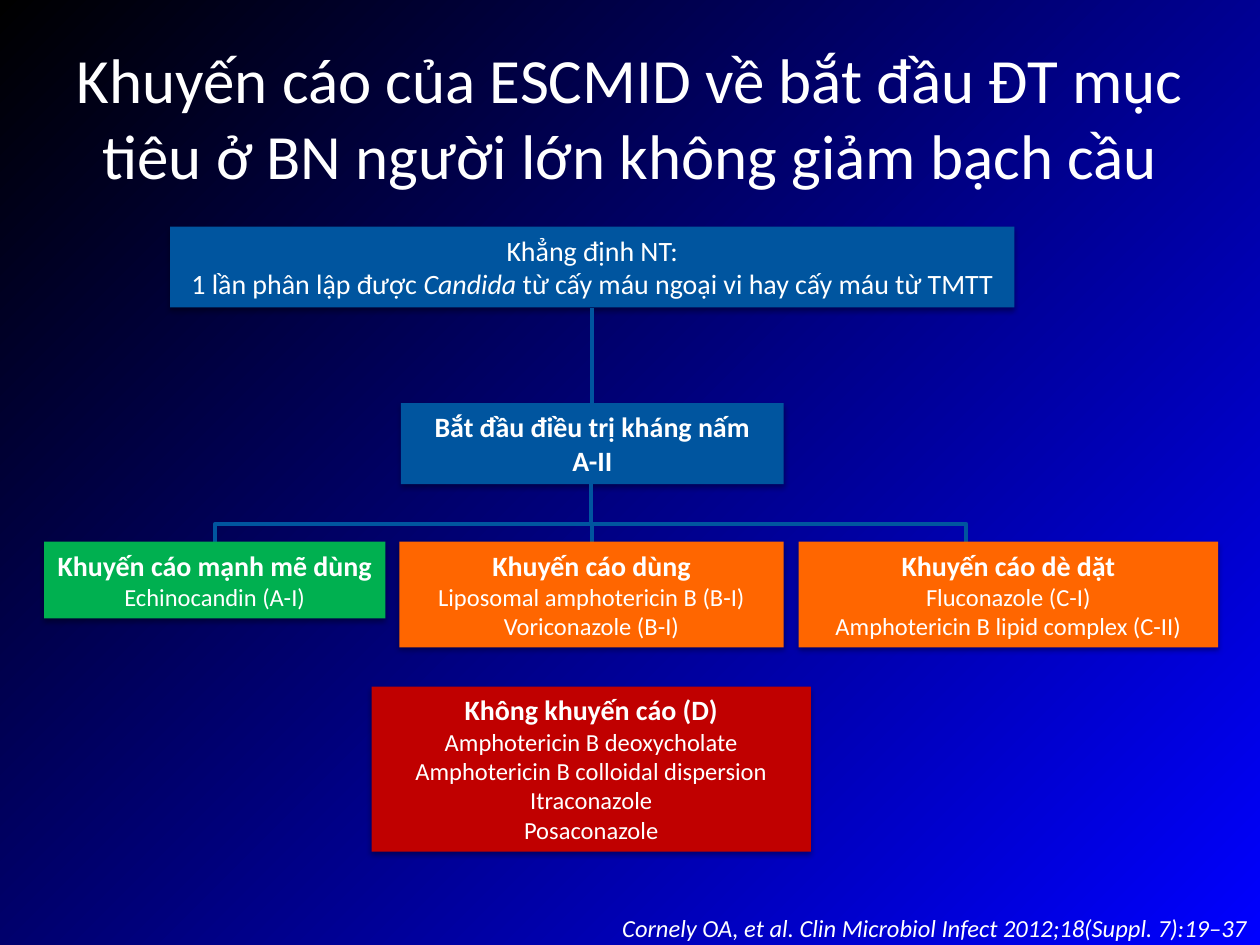
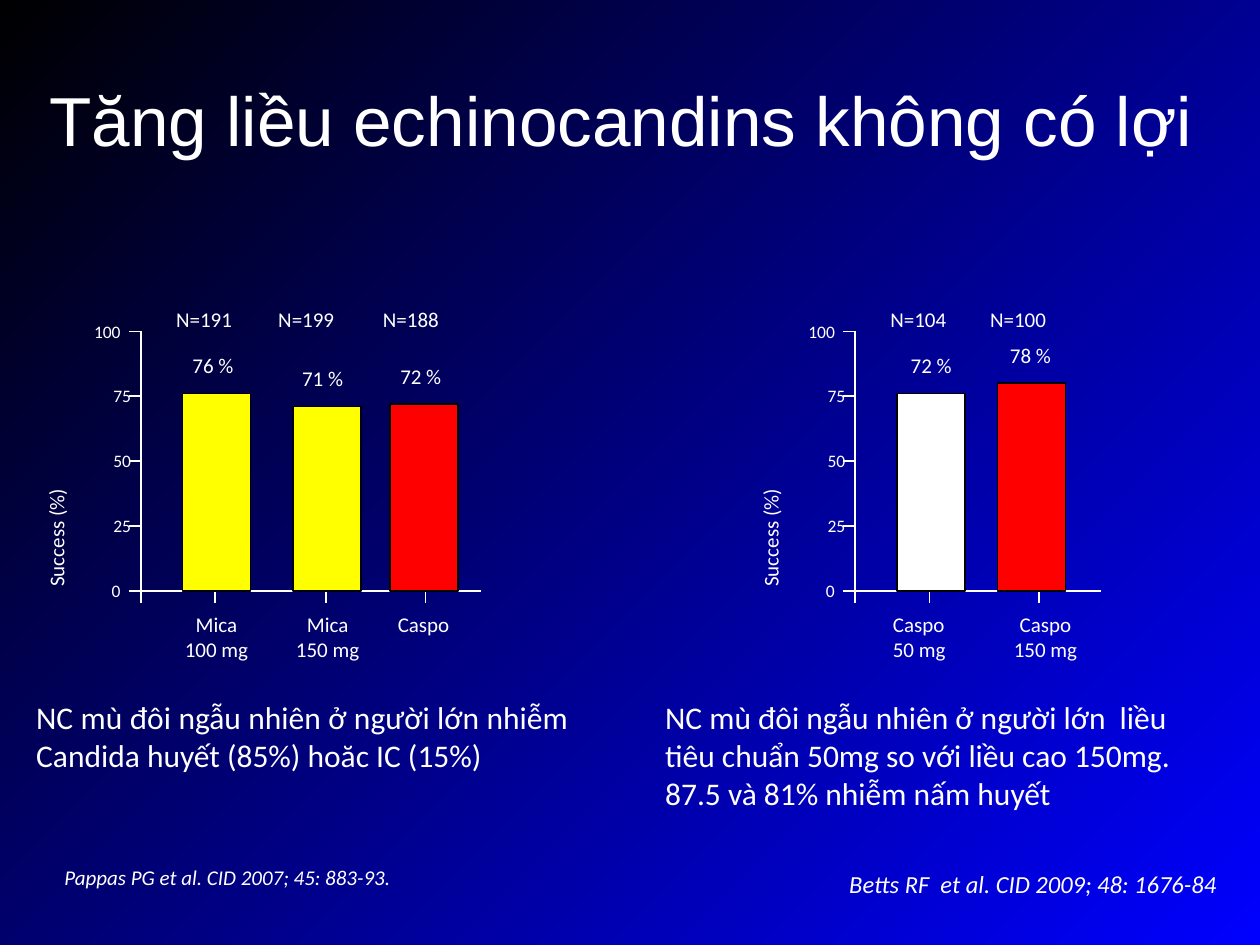
from dataclasses import dataclass

from pptx import Presentation
from pptx.dml.color import RGBColor
from pptx.enum import shapes as kinds, text as styles
from pptx.oxml import parse_xml
from pptx.oxml.ns import nsdecls, qn
from pptx.util import Cm, Pt

COLORS = {
    "white": "FFFFFF",
    "black": "000000",
    "glow": "0000FF",
    "step": "00559F",
    "strong": "00B050",
    "moderate": "FF6600",
    "against": "C00000",
    "yellow": "FFFF00",
    "red": "FF0000",
}
FONT = "Calibri"
LEFT, CENTER, RIGHT, JUSTIFY = (
    styles.PP_ALIGN.LEFT, styles.PP_ALIGN.CENTER,
    styles.PP_ALIGN.RIGHT, styles.PP_ALIGN.JUSTIFY)
TOP, MIDDLE, BOTTOM = (
    styles.MSO_ANCHOR.TOP, styles.MSO_ANCHOR.MIDDLE, styles.MSO_ANCHOR.BOTTOM)

BODY_INSETS = (0.25, 0.13, 0.25, 0.13)
CITATION_INSETS = (0.51, 0.13, 0.25, 0.51)
LABEL_INSETS = (0.1, 0.1, 0.1, 0.1)
NO_INSETS = (0, 0, 0, 0)

# Bar chart geometry in cm; x values are measured from the vertical axis
AXIS_TOP, AXIS_BOTTOM = 6.68, 11.91
TICK = 0.24
BAR_WIDTH = 1.37


@dataclass
class Bar:
    left: float
    tick: float
    height: float  # on the 0-100 scale
    color: str
    count: str
    count_x: float
    value: str
    value_x: float
    name: str
    name_x: float
    name_align: styles.PP_ALIGN = CENTER


MICA_TRIAL = [
    Bar(0.84, 1.5, 76, "yellow", "N=191", 0.61, "76 %", 0.94, "Mica\n100 mg", 0.66),
    Bar(3.07, 3.73, 71, "yellow", "N=199", 2.67, "71 %", 3.15, "Mica\n150 mg", 2.9),
    Bar(5.03, 5.74, 72, "red", "N=188", 4.78, "72 %", 5.13, "Caspo", 5.08, LEFT),
]
CASPO_TRIAL = [
    Bar(0.84, 1.5, 76, "white", "N=104", 0.61, "72 %", 1.02, "Caspo\n50 mg", 0.66, LEFT),
    Bar(2.87, 3.71, 80, "red", "N=100", 2.62, "78 %", 3.02, "Caspo\n150 mg", 2.97),
]


def rgb(name):
    return RGBColor.from_string(COLORS[name])


def cm(*lengths):
    return [Cm(length) for length in lengths]


def set_background(master):
    """Radial gradient, shared by all slides, that glows from the lower right."""
    background = parse_xml(
        f'<p:bg {nsdecls("p", "a")}><p:bgPr><a:gradFill rotWithShape="1"><a:gsLst>'
        f'<a:gs pos="0"><a:srgbClr val="{COLORS["glow"]}"/></a:gs>'
        f'<a:gs pos="100000"><a:srgbClr val="{COLORS["black"]}"/></a:gs></a:gsLst>'
        '<a:path path="circle"><a:fillToRect l="100000" t="100000"/></a:path>'
        '</a:gradFill><a:effectLst/></p:bgPr></p:bg>')
    content = master.element.cSld
    previous = content.find(qn("p:bg"))
    if previous is not None:
        content.remove(previous)
    content.insert(0, background)


def style(paragraph, size, align=LEFT, bold=False, italic=False, font=FONT):
    paragraph.alignment = align
    paragraph.font.name = font
    paragraph.font.size = Pt(size)
    paragraph.font.bold = bold
    paragraph.font.italic = italic
    paragraph.font.color.rgb = rgb("white")


def set_frame(frame, insets, anchor):
    frame.word_wrap = True
    frame.auto_size = styles.MSO_AUTO_SIZE.NONE
    frame.vertical_anchor = anchor
    (frame.margin_left, frame.margin_top,
     frame.margin_right, frame.margin_bottom) = cm(*insets)


def add_titled_slide(prs, title, place, size, font=FONT):
    slide = prs.slides.add_slide(prs.slide_layouts[5])
    heading = slide.shapes.title
    heading.left, heading.top, heading.width, heading.height = cm(*place)
    set_frame(heading.text_frame, BODY_INSETS, MIDDLE)
    heading.text_frame.text = title
    style(heading.text_frame.paragraphs[0], size, CENTER, font=font)
    return slide


def add_text(shapes, content, place, size, align=LEFT, insets=BODY_INSETS,
             anchor=TOP, italic=False):
    label = shapes.add_textbox(*cm(*place))
    set_frame(label.text_frame, insets, anchor)
    paragraph = label.text_frame.paragraphs[0]
    paragraph.text = content.replace("\n", "\v")
    style(paragraph, size, align, italic=italic)
    return label


def add_rect(shapes, place, color):
    rect = shapes.add_shape(kinds.MSO_SHAPE.RECTANGLE, *cm(*place))
    rect.fill.solid()
    rect.fill.fore_color.rgb = rgb(color)
    rect.line.fill.background()
    rect.shadow.inherit = False
    return rect


def add_step(shapes, place, color, heading, drugs=(), bold=True):
    """Flow chart box with a soft shadow, a heading and smaller lines below."""
    step = add_rect(shapes, place, color)
    step.element.spPr.find(qn("a:effectLst")).append(parse_xml(
        f'<a:outerShdw {nsdecls("a")} blurRad="40000" dist="23000" dir="5400000"'
        f' rotWithShape="0"><a:srgbClr val="{COLORS["black"]}">'
        '<a:alpha val="35000"/></a:srgbClr></a:outerShdw>'))
    frame = step.text_frame
    set_frame(frame, BODY_INSETS, TOP)
    frame.paragraphs[0].text = heading.replace("\n", "\v")
    style(frame.paragraphs[0], 16, CENTER, bold=bold)
    for drug in drugs:
        paragraph = frame.add_paragraph()
        paragraph.text = drug
        style(paragraph, 14, CENTER)
    return step


def add_line(shapes, x1, y1, x2, y2, color="white", width=1,
             kind=kinds.MSO_CONNECTOR.STRAIGHT):
    line = shapes.add_connector(kind, *cm(x1, y1, x2, y2))
    line.line.color.rgb = rgb(color)
    line.line.width = Pt(width)
    line.element.spPr.append(parse_xml(f'<a:effectLst {nsdecls("a")}/>'))
    return line


def add_branch(shapes, x1, y1, x2, y2):
    """Elbow that leaves downwards: a horizontal elbow turned a quarter."""
    drop, reach = y2 - y1, abs(x2 - x1)
    left, top = (x1 + x2 - drop) / 2, (y1 + y2 - reach) / 2
    branch = add_line(shapes, left, top, left + drop, top + reach, "step", 2.25,
                      kinds.MSO_CONNECTOR.ELBOW)
    xfrm = branch.element.spPr.find(qn("a:xfrm"))
    xfrm.set("rot", "5400000" if x2 < x1 else "16200000")
    if x2 >= x1:
        xfrm.set("flipH", "1")


def add_bar_panel(slide, axis_x, axis_end, bars):
    shapes = slide.shapes.add_group_shape().shapes
    add_line(shapes, axis_x, AXIS_TOP, axis_x, AXIS_BOTTOM)
    add_line(shapes, axis_x, AXIS_BOTTOM, axis_end, AXIS_BOTTOM)
    scale = (AXIS_BOTTOM - AXIS_TOP) / 100

    for level in range(0, 101, 25):
        y = AXIS_BOTTOM - level * scale
        add_line(shapes, axis_x - TICK, y, axis_x, y)
        gap = 0.41 if level in (0, 100) else 0.2
        add_text(shapes, str(level), (axis_x - gap - 0.61, y - 0.22, 0.61, 0.43),
                 10, RIGHT, NO_INSETS, MIDDLE)

    for tick in [0] + [bar.tick for bar in bars]:
        add_line(shapes, axis_x + tick, AXIS_BOTTOM, axis_x + tick, AXIS_BOTTOM + TICK)

    for bar in bars:
        height = bar.height * scale
        top = AXIS_BOTTOM - height
        column = add_rect(shapes, (axis_x + bar.left, top, BAR_WIDTH, height), bar.color)
        column.line.color.rgb = rgb("black")
        column.line.width = Pt(1)
        add_text(shapes, bar.value, (axis_x + bar.value_x, top - 0.92, 1.5, 0.71),
                 12, insets=LABEL_INSETS, anchor=MIDDLE)
        add_text(shapes, bar.count, (axis_x + bar.count_x, 6.08, 1.63, 0.71),
                 12, insets=LABEL_INSETS, anchor=MIDDLE)
        add_text(shapes, bar.name, (axis_x + bar.name_x, 12.22, 1.73, 1.22),
                 12, bar.name_align, LABEL_INSETS)

    axis_title = add_text(shapes, "Success (%)", (axis_x - 4.39, 8.89, 5.36, 0.51),
                          12, insets=NO_INSETS, anchor=MIDDLE)
    axis_title.rotation = 270


def build_recommendations(prs):
    slide = add_titled_slide(
        prs, "Khuyến cáo của ESCMID về bắt đầu ĐT mục tiêu ở BN người lớn "
        "không giảm bạch cầu", (1.27, 0.76, 22.86, 3.18), 36)
    shapes = slide.shapes

    diagnosis = add_step(shapes, (3.43, 4.57, 17.02, 1.63), "step",
                         "Khẳng định NT:", bold=False)
    finding = diagnosis.text_frame.add_paragraph()
    style(finding, 16, CENTER)
    for part in ("1 lần phân lập được ", "Candida ",
                 "từ cấy máu ngoại vi hay cấy máu từ TMTT"):
        run = finding.add_run()
        run.text = part
        run.font.italic = part == "Candida "

    add_step(shapes, (8.08, 8.13, 7.72, 1.63), "step",
             "Bắt đầu điều trị kháng nấm\nA-II")
    add_step(shapes, (7.49, 13.84, 8.86, 3.33), "against", "Không khuyến cáo (D)",
             ("Amphotericin B deoxycholate", "Amphotericin B colloidal dispersion",
              "Itraconazole", "Posaconazole"))

    for target_x in (4.34, 11.94, 19.48):
        add_branch(shapes, 11.92, 9.74, target_x, 11.38)
    add_step(shapes, (0.89, 10.92, 6.88, 1.55), "strong",
             "Khuyến cáo mạnh mẽ dùng", ("Echinocandin (A-I)",))
    add_step(shapes, (8.05, 10.92, 7.75, 2.13), "moderate", "Khuyến cáo dùng",
             ("Liposomal amphotericin B (B-I)", "Voriconazole (B-I)"))
    add_step(shapes, (16.1, 10.92, 8.46, 2.13), "moderate", "Khuyến cáo dè dặt",
             ("Fluconazole (C-I)", "Amphotericin B lipid complex (C-II)"))
    add_line(shapes, 11.94, 8.13, 11.94, 6.2, "step", 2.25)

    add_text(shapes, "Cornely OA, et al. Clin Microbiol Infect 2012;18(Suppl. 7):19–37",
             (6.3, 18.26, 19.1, 0.86), 14, RIGHT, anchor=BOTTOM, italic=True)


def build_dose_trials(prs):
    slide = add_titled_slide(prs, "Tăng liều echinocandins không có lợi",
                             (0, 1.12, 25.04, 2.54), 39.6, "Arial")
    shapes = slide.shapes
    add_bar_panel(slide, 2.84, 9.7, MICA_TRIAL)
    add_bar_panel(slide, 17.24, 22.2, CASPO_TRIAL)

    add_text(shapes, "NC mù đôi ngẫu nhiên ở người lớn nhiễm Candida huyết (85%) "
             "hoăc IC (15%)", (0.48, 13.94, 11.23, 1.8), 18, JUSTIFY)
    add_text(shapes, "NC mù đôi ngẫu nhiên ở người lớn  liều tiêu chuẩn 50mg so với "
             "liều cao 150mg. 87.5 và 81% nhiễm nấm huyết",
             (13.16, 13.94, 11.15, 2.57), 18)
    add_text(shapes, "Pappas PG et al. CID 2007; 45: 883-93.",
             (0.79, 17.3, 7.7, 1.14), 12, insets=CITATION_INSETS,
             anchor=BOTTOM, italic=True)
    add_text(shapes, "Betts RF  et al. CID 2009; 48: 1676-84",
             (16.61, 17.4, 8.6, 1.22), 14, insets=CITATION_INSETS,
             anchor=BOTTOM, italic=True)


def main():
    prs = Presentation()
    prs.slide_width, prs.slide_height = cm(25.4, 19.05)
    set_background(prs.slide_master)
    build_recommendations(prs)
    build_dose_trials(prs)
    prs.save("out.pptx")


if __name__ == "__main__":
    main()
